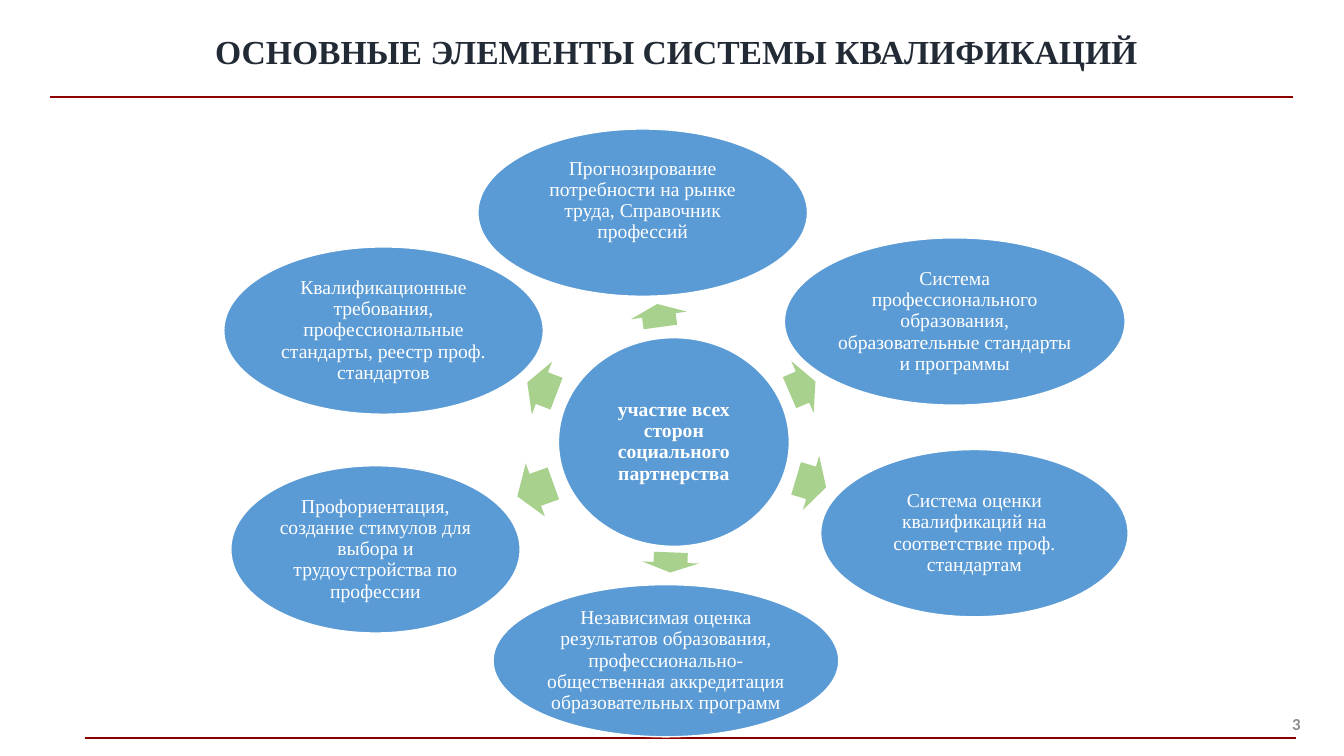
from lxml.etree import SubElement
from pptx import Presentation
from pptx.dml.color import RGBColor
from pptx.enum.shapes import MSO_CONNECTOR, MSO_SHAPE
from pptx.enum.text import MSO_ANCHOR, PP_ALIGN
from pptx.oxml.ns import qn
from pptx.util import Inches, Pt

WIDE, HIGH = Inches(13.33), Inches(7.5)
BLUE, GREEN, RED = "5B9BD5", "A9D18E", "8E0000"
WHITE, DARK, GRAY = "FFFFFF", "222A35", "8C8C8C"


def color(code):
    return RGBColor.from_string(code)


def across(share):
    return round(WIDE * share / 100)


def down(share):
    return round(HIGH * share / 100)


class Page:
    """Places parts by percent of the slide's width and height."""

    font = "Times New Roman"

    def __init__(self, slide):
        self.shapes = slide.shapes

    def letter(self, shape, text, size, ink, bold=False, align=PP_ALIGN.CENTER,
               pad=0.02, lift=0, font=None, lead=0.9):
        frame = shape.text_frame
        frame.word_wrap = True
        frame.vertical_anchor = MSO_ANCHOR.MIDDLE
        frame.margin_left = frame.margin_right = frame.margin_top = Inches(pad)
        frame.margin_bottom = Inches(pad + lift)
        frame.text = text
        para = frame.paragraphs[0]
        para.alignment = align
        para.line_spacing = lead
        face = para.runs[0].font
        face.name = font or self.font
        face.size = Pt(size)
        face.bold = bold
        face.color.rgb = color(ink)

    def label(self, x, y, w, h, text, size, ink, **style):
        box = self.shapes.add_textbox(across(x), down(y), across(w), down(h))
        self.letter(box, text, size, ink, bold=True, lead=1.0, **style)

    def rule(self, start, end, y):
        line = self.shapes.add_connector(
            MSO_CONNECTOR.STRAIGHT, across(start), down(y), across(end), down(y))
        line.line.color.rgb = color(RED)
        line.line.width = Pt(1.5)
        SubElement(line._element.spPr, qn("a:effectLst"))

    def solid(self, kind, x, y, w, h, fill):
        """Draw a preset shape around its centre."""
        shape = self.shapes.add_shape(
            kind, across(x - w / 2), down(y - h / 2), across(w), down(h))
        shape.shadow.inherit = False
        shape.fill.solid()
        shape.fill.fore_color.rgb = color(fill)
        return shape

    def oval(self, x, y, w, h, text, **style):
        shape = self.solid(MSO_SHAPE.OVAL, x, y, w, h, BLUE)
        shape.line.color.rgb = color(WHITE)
        shape.line.width = Pt(1)
        self.letter(shape, text, 14, WHITE, **style)

    def arrow(self, x, y, w, turn):
        shape = self.solid(MSO_SHAPE.RIGHT_ARROW, x, y, w, 7.47, GREEN)
        shape.line.fill.background()
        shape.adjustments[0] = 0.6
        shape.adjustments[1] = 0.5
        shape.rotation = turn


# Clockwise from the top: oval (centre, width, height), arrow (centre, length, turn)
PARTS = [
    ((47.82, 28.13, 24.53, 22.13), (49.02, 41.73, 1.73, 262.2),
     "Прогнозирование потребности на рынке труда, Справочник профессий"),
    ((71.04, 42.53, 25.36, 22.13), (59.71, 51.2, 2.1, 336.7),
     "Система профессионального образования, образовательные стандарты и программы"),
    ((72.5, 70.53, 22.88, 22.13), (60.35, 63.87, 2.33, 16.7),
     "Система оценки квалификаций на соответствие проф. стандартам"),
    ((49.55, 87.4, 25.73, 20.13), (49.89, 74.4, 1.5, 92.1),
     "Независимая оценка результатов образования, "
     "профессионально-общественная аккредитация образовательных программ"),
    ((27.94, 72.67, 21.53, 22.13), (39.83, 64.8, 2.85, 160.2),
     "Профориентация, создание стимулов для выбора и трудоустройства по профессии"),
    ((28.54, 43.73, 23.78, 22.13), (40.32, 51.33, 2.33, 201),
     "Квалификационные требования, профессиональные стандарты, "
     "реестр проф. стандартов"),
]


def main():
    deck = Presentation()
    deck.slide_width, deck.slide_height = WIDE, HIGH
    page = Page(deck.slides.add_slide(deck.slide_layouts[6]))

    # Rules and title
    page.rule(6.3, 96.4, 97.6)
    page.rule(3.75, 96.17, 12.8)
    page.label(3.9, 2.53, 92.87, 8.4, "ОСНОВНЫЕ ЭЛЕМЕНТЫ СИСТЕМЫ КВАЛИФИКАЦИЙ",
               24, DARK)

    # Hub
    page.oval(50.14, 58.47, 17.18, 27.6,
              "участие всех сторон социального партнерства", bold=True)

    # Ring of elements; the text of the top one sits higher
    for place, (oval, arrow, text) in enumerate(PARTS):
        page.arrow(*arrow)
        page.oval(*oval, text, lift=0.24 if place == 0 else 0)

    # Page number
    page.label(92.05, 93.07, 4.73, 5.33, "3", 12, GRAY,
               align=PP_ALIGN.RIGHT, pad=0, font="Calibri")

    deck.save("out.pptx")


if __name__ == "__main__":
    main()
